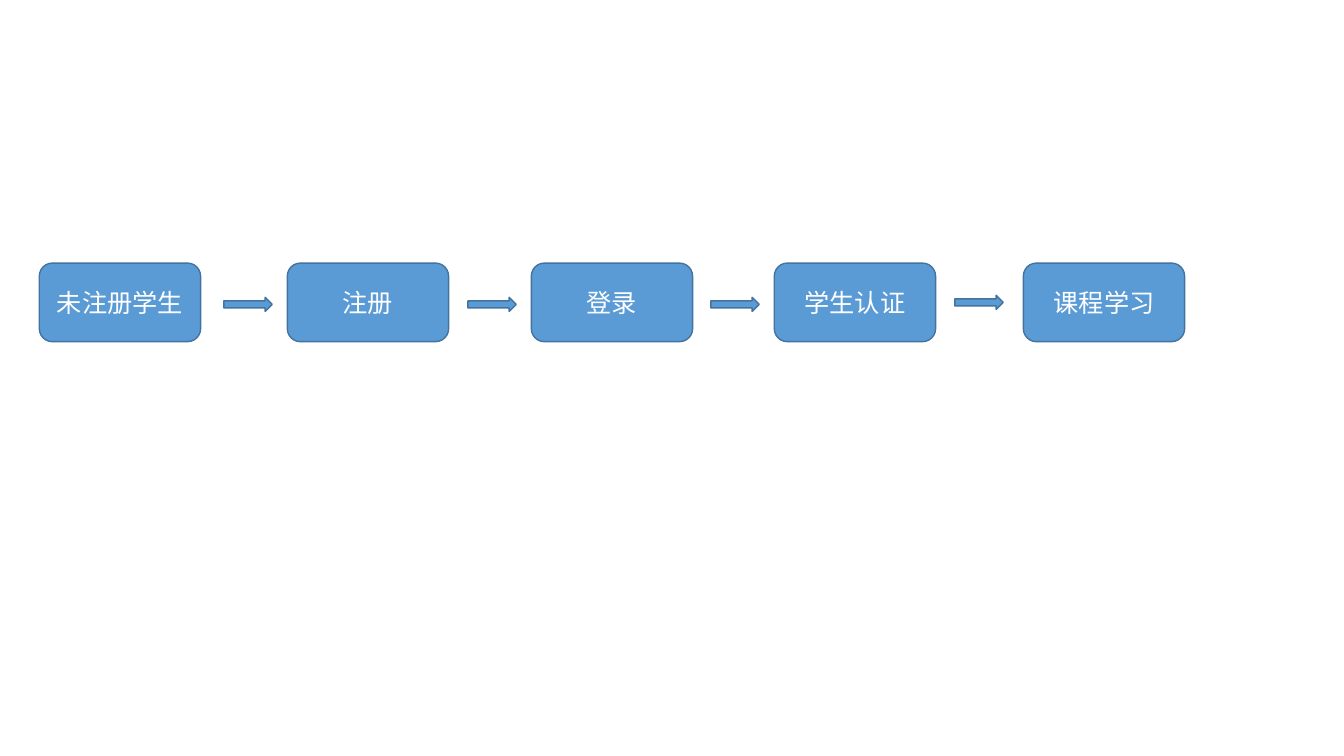
"""Build a slide with the five-step flow from unregistered student to course study."""
from pptx import Presentation
from pptx.dml.color import RGBColor
from pptx.enum.shapes import MSO_SHAPE as Shape
from pptx.enum.text import MSO_ANCHOR as Anchor, PP_ALIGN as Align
from pptx.util import Inches, Pt

BLUE = RGBColor(0x5B, 0x9B, 0xD5)
DARK_BLUE = RGBColor(0x43, 0x73, 0x9E)
WHITE = RGBColor(0xFF, 0xFF, 0xFF)

STEPS = [
    ("未注册学生", 0.39),
    ("注册", 2.85),
    ("登录", 5.27),
    ("学生认证", 7.68),
    ("课程学习", 10.15),
]
ARROWS = [(2.22, 2.95), (4.64, 2.95), (7.05, 2.95), (9.47, 2.93)]

prs = Presentation()
prs.slide_width = Inches(13.33)
prs.slide_height = Inches(7.5)
slide = prs.slides.add_slide(prs.slide_layouts[6])


def add_block(preset, left, top, width, height):
    block = slide.shapes.add_shape(
        preset, Inches(left), Inches(top), Inches(width), Inches(height)
    )
    block.shadow.inherit = False
    block.fill.solid()
    block.fill.fore_color.rgb = BLUE
    block.line.color.rgb = DARK_BLUE
    block.line.width = Pt(1)
    return block


for label, left in STEPS:
    step = add_block(Shape.ROUNDED_RECTANGLE, left, 2.61, 1.6, 0.78)
    step.text_frame.word_wrap = True
    step.text_frame.vertical_anchor = Anchor.MIDDLE
    paragraph = step.text_frame.paragraphs[0]
    paragraph.alignment = Align.CENTER
    run = paragraph.add_run()
    run.text = label
    run.font.name = "Calibri"
    run.font.size = Pt(18)
    run.font.color.rgb = WHITE

for left, top in ARROWS:
    add_block(Shape.RIGHT_ARROW, left, top, 0.48, 0.14)

prs.save("out.pptx")
